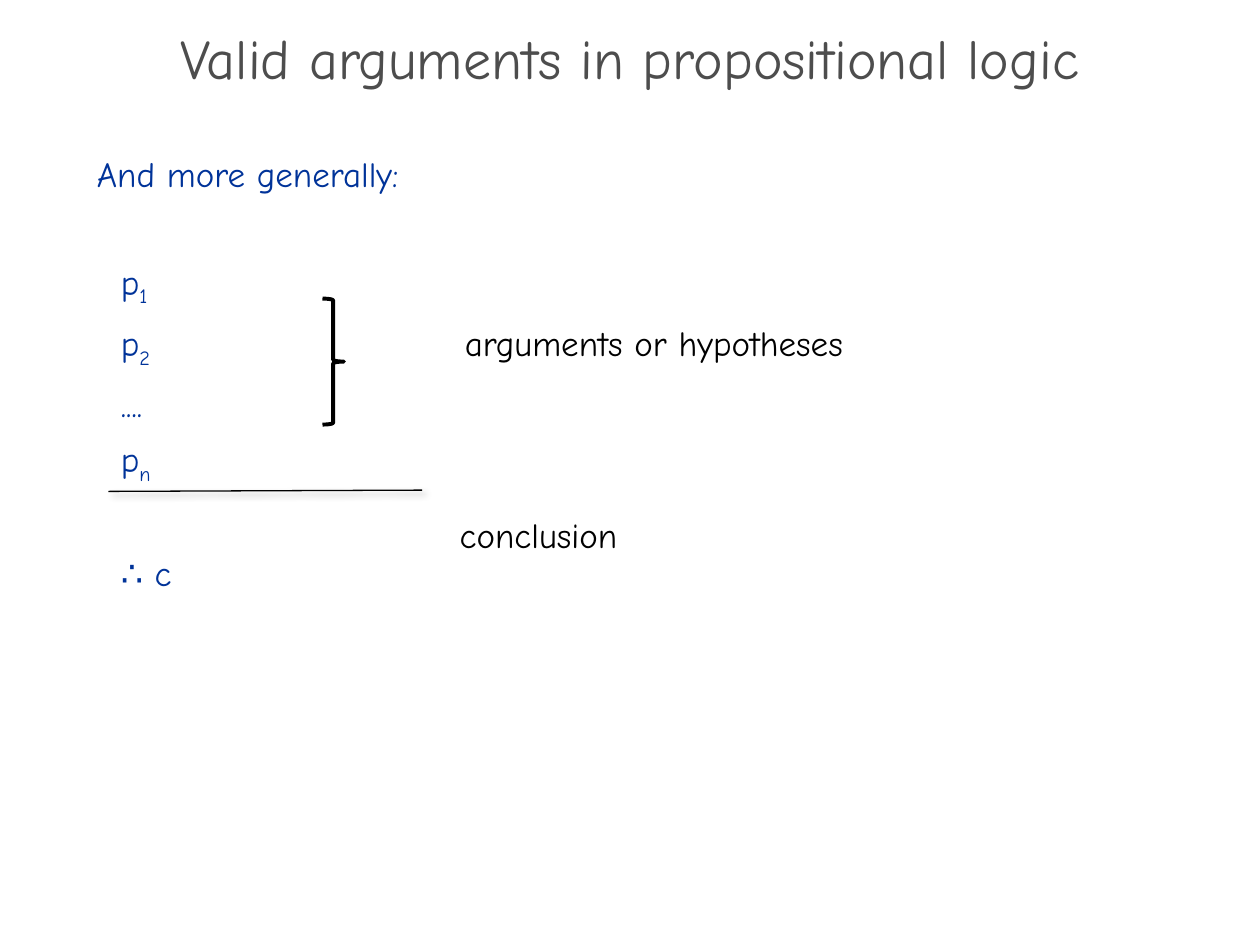
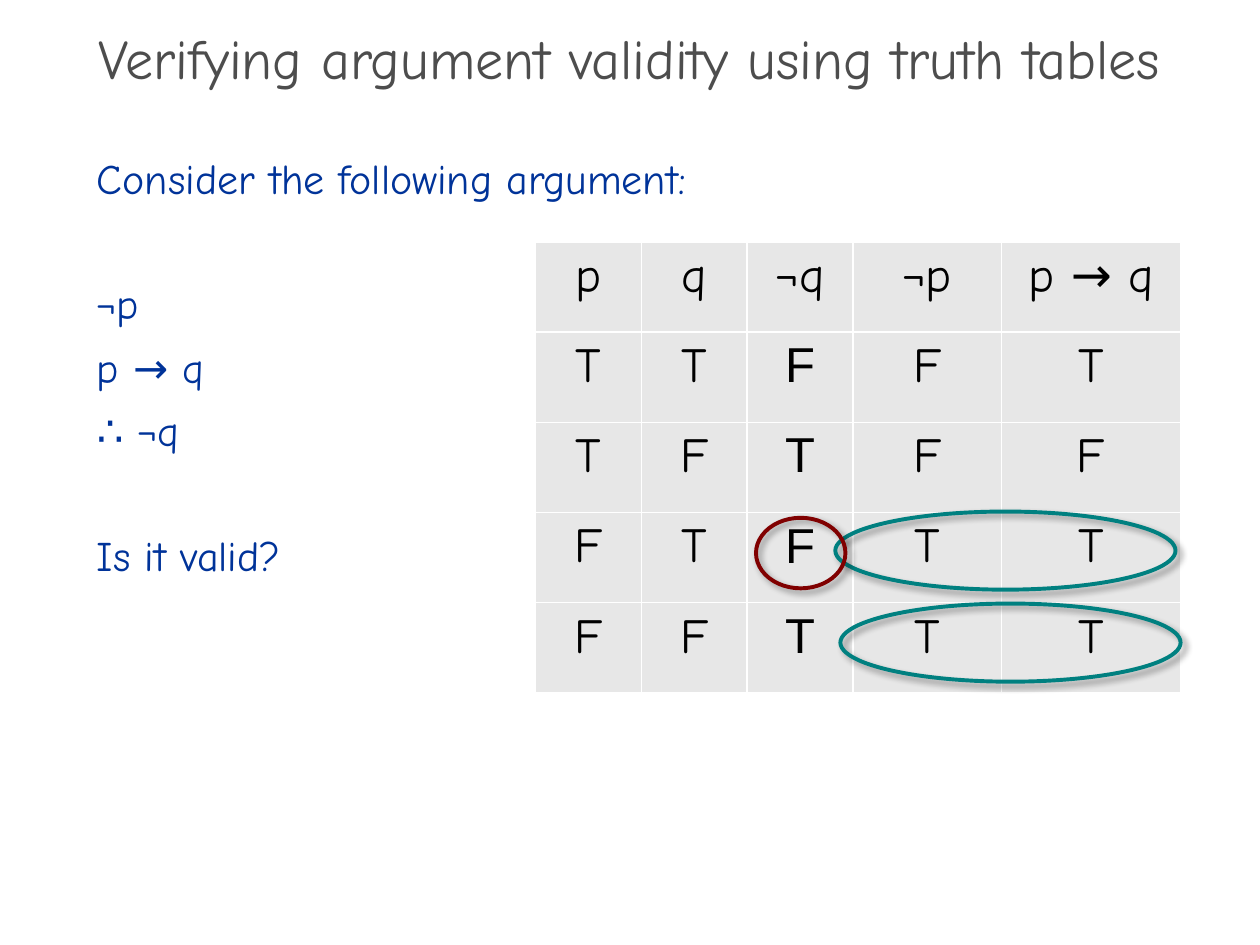
"""Two slides on valid arguments in propositional logic and checking them with a truth table."""
from lxml import etree
from pptx import Presentation
from pptx.dml.color import RGBColor
from pptx.enum.shapes import MSO_CONNECTOR, MSO_SHAPE
from pptx.enum.text import MSO_ANCHOR, PP_ALIGN
from pptx.oxml import parse_xml
from pptx.oxml.ns import nsdecls, qn
from pptx.util import Inches, Pt

BLACK = RGBColor(0x00, 0x00, 0x00)
WHITE = RGBColor(0xFF, 0xFF, 0xFF)
TITLE_GREY = RGBColor(0x4D, 0x4D, 0x4D)
BODY_BLUE = RGBColor(0x00, 0x33, 0x99)
CELL_GREY = RGBColor(0xE7, 0xE7, 0xE7)
TEAL = RGBColor(0x00, 0x80, 0x80)
MAROON = RGBColor(0x80, 0x00, 0x00)
FONT = "Comic Neue"
CONCLUSION_FONT = "Arial"
TITLE_BOX = (0, 0.27, 10, 0.5)
BODY_BOX = (0.67, 1.16, 8.58, 5.92)


def add_text(slide, box, lines, size, color, wrap=True):
    """Add a text box; each line is a list of (text, baseline) runs."""
    frame = slide.shapes.add_textbox(*map(Inches, box)).text_frame
    frame.word_wrap = wrap
    for number, line in enumerate(lines):
        paragraph = frame.paragraphs[0] if number == 0 else frame.add_paragraph()
        for text, baseline in line:
            run = paragraph.add_run()
            run.text = text
            run.font.name = FONT
            run.font.size = Pt(size)
            run.font.color.rgb = color
            if baseline:
                run.font._element.set("baseline", str(baseline * 1000))
    return frame


def add_shadow(shape):
    """Cast a soft shadow to the lower right."""
    shape._element.spPr.append(parse_xml(
        f'<a:effectLst {nsdecls("a")}>'
        f'<a:outerShdw blurRad="{Pt(4)}" dist="{Pt(3)}" dir="2700000">'
        '<a:srgbClr val="000000"><a:alpha val="40000"/></a:srgbClr>'
        '</a:outerShdw></a:effectLst>'))


prs = Presentation()
prs.slide_width, prs.slide_height = Inches(10), Inches(7.5)

contents = [
    ("Valid arguments in propositional logic", 20, 0.19, 30, (1, 5),
     [[("And more generally:", 0)],
      [("p", 0), ("1", -25)],
      [("p", 0), ("2", -25)],
      [("....", 0)],
      [("p", 0), ("n", -25)],
      [("∴ c", 0)]]),
    ("Verifying argument validity using truth tables", 24, 0, 35, (1, 4),
     [[("Consider the following argument:", 0)],
      [("¬p", 0)],
      [("p → q", 0)],
      [("∴ ¬q", 0)],
      [("Is it valid?", 0)]]),
]
slides = []
for title, size, indent, group_gap, group_starts, lines in contents:
    slide = prs.slides.add_slide(prs.slide_layouts[6])
    slides.append(slide)
    heading = add_text(slide, TITLE_BOX, [[(title, 0)]], 32, TITLE_GREY)
    heading.vertical_anchor = MSO_ANCHOR.MIDDLE
    heading.paragraphs[0].alignment = PP_ALIGN.CENTER
    heading.paragraphs[0].line_spacing = 0.7
    body = add_text(slide, BODY_BOX, lines, size, BODY_BLUE)
    for number, paragraph in enumerate(body.paragraphs):
        paragraph.space_before = Pt(1.6 + (group_gap if number in group_starts else 0))
        paragraph.space_after = Pt(6)
        if number and indent:
            paragraph._p.get_or_add_pPr().set("marL", str(Inches(indent)))

general_form, truth_check = slides

inference_line = general_form.shapes.add_connector(
    MSO_CONNECTOR.STRAIGHT, Inches(0.86), Inches(3.9), Inches(3.35), Inches(3.89))
inference_line.line.color.rgb = BLACK
inference_line.line.width = Pt(0.75)
add_shadow(inference_line)

for label, box in [("arguments or hypotheses", (3.59, 2.5, 3.49, 0.44)),
                   ("conclusion", (3.55, 4.03, 1.52, 0.44))]:
    add_text(general_form, box, [[(label, 0)]], 20, BLACK, wrap=False)

hypotheses_brace = general_form.shapes.add_shape(
    MSO_SHAPE.RIGHT_BRACE, Inches(2.56), Inches(2.37), Inches(0.17), Inches(1))
hypotheses_brace.shadow.inherit = False
hypotheses_brace.fill.background()
hypotheses_brace.line.color.rgb = BLACK
hypotheses_brace.line.width = Pt(2.25)

truth_rows = [
    ["p", "q", "¬q", "¬p", "p → q"],
    ["T", "T", "F", "F", "T"],
    ["T", "F", "T", "F", "F"],
    ["F", "T", "F", "T", "T"],
    ["F", "F", "T", "T", "T"],
]
column_widths = [0.84, 0.84, 0.84, 1.18, 1.42]
truth_table = truth_check.shapes.add_table(
    len(truth_rows), len(column_widths),
    Inches(4.25), Inches(1.92), Inches(5.12), Inches(3.58)).table
for column, width in zip(truth_table.columns, column_widths):
    column.width = Inches(width)
for r, values in enumerate(truth_rows):
    for c, value in enumerate(values):
        cell = truth_table.cell(r, c)
        paragraph = cell.text_frame.paragraphs[0]
        paragraph.alignment = PP_ALIGN.CENTER
        before = etree.SubElement(paragraph._p.get_or_add_pPr(), qn("a:spcBef"))
        etree.SubElement(before, qn("a:spcPct"), val="20000")
        run = paragraph.add_run()
        run.text = value
        run.font.name = CONCLUSION_FONT if r and c == 2 else FONT
        run.font.size = Pt(28)
        run.font.bold = False
        run.font.color.rgb = BLACK
        properties = cell._tc.get_or_add_tcPr()
        for side in ("lnL", "lnR", "lnT", "lnB"):
            properties.append(parse_xml(
                f'<a:{side} {nsdecls("a")} w="{Pt(1)}"><a:solidFill>'
                f'<a:srgbClr val="{WHITE}"/></a:solidFill></a:{side}>'))
        cell.fill.solid()
        cell.fill.fore_color.rgb = CELL_GREY

for box, color in [((6.67, 4.79, 2.7, 0.62), TEAL),
                   ((6.63, 4.06, 2.7, 0.62), TEAL),
                   ((6, 4.11, 0.71, 0.56), MAROON)]:
    ring = truth_check.shapes.add_shape(MSO_SHAPE.OVAL, *map(Inches, box))
    ring.fill.background()
    ring.line.color.rgb = color
    ring.line.width = Pt(2.25)
    add_shadow(ring)

prs.save("out.pptx")
